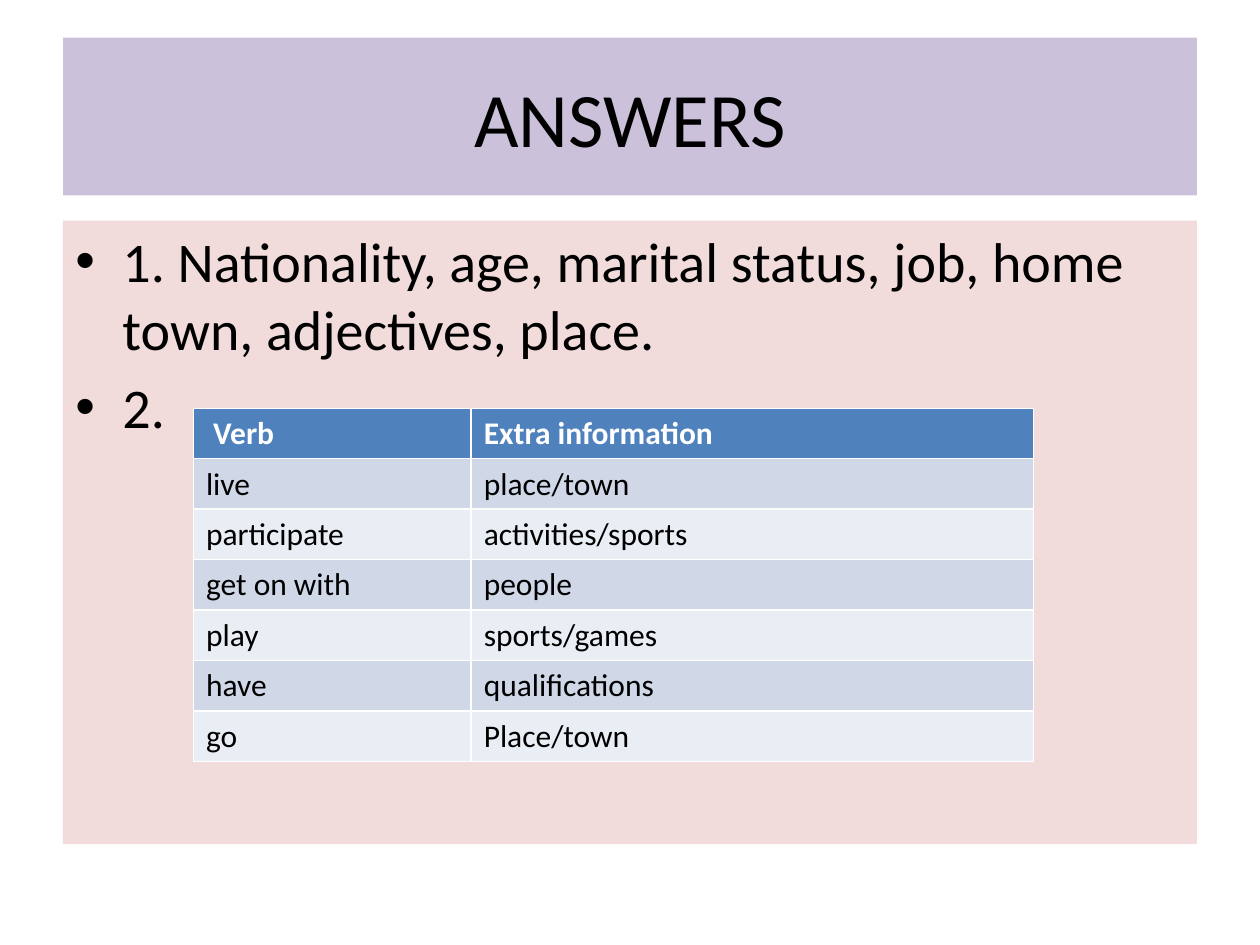
from dataclasses import dataclass

from lxml import etree
from pptx import Presentation
from pptx.dml.color import RGBColor
from pptx.enum.text import MSO_ANCHOR, PP_ALIGN
from pptx.oxml.ns import qn
from pptx.util import Cm, Pt

CENTER, LEFT = PP_ALIGN.CENTER, PP_ALIGN.LEFT
TOP, MIDDLE = MSO_ANCHOR.TOP, MSO_ANCHOR.MIDDLE
TITLE_ONLY = 5


@dataclass(frozen=True)
class Theme:
    """Colours and type sizes of the slide."""
    font: str = "Calibri"
    text: str = "000000"
    light_text: str = "FFFFFF"
    title_fill: str = "CCC1DA"
    body_fill: str = "F2DCDB"
    header_fill: str = "4F81BD"
    bands: tuple = ("D0D8E8", "E9EDF4")
    title_size: int = 44
    body_size: int = 32
    table_size: int = 18


def fill(target, color):
    """Give a shape or cell a solid fill."""
    target.fill.solid()
    target.fill.fore_color.rgb = RGBColor.from_string(color)


def write(p, text, *, font, size, color, bold=False, align=LEFT):
    """Put one formatted run into a paragraph."""
    p.alignment = align
    r = p.add_run()
    r.text = text
    r.font.name, r.font.size, r.font.bold = font, Pt(size), bold
    r.font.color.rgb = RGBColor.from_string(color)


def add_bullet(p, indent):
    """Give a paragraph a round bullet with a hanging indent."""
    pPr = p._p.get_or_add_pPr()
    pPr.set("marL", str(indent))
    pPr.set("indent", str(-indent))
    etree.SubElement(pPr, qn("a:buFont")).set("typeface", "Arial")
    etree.SubElement(pPr, qn("a:buChar")).set("char", "•")


class SlideBuilder:
    """Hold the theme and the current slide."""

    def __init__(self, prs, theme):
        """Add a title-only slide to the presentation."""
        self.theme = theme
        self.s = prs.slides.add_slide(prs.slide_layouts[TITLE_ONLY])

    def title(self, text, left, top, width, height):
        """Place and format the title."""
        t, sp = self.theme, self.s.shapes.title
        sp.left, sp.top, sp.width, sp.height = left, top, width, height
        fill(sp, t.title_fill)
        tf = sp.text_frame
        tf.vertical_anchor = MIDDLE
        write(tf.paragraphs[0], text, font=t.font, size=t.title_size,
              color=t.text, align=CENTER)

    def bullets(self, items, left, top, width, height):
        """Add a filled box of bulleted paragraphs."""
        t = self.theme
        sp = self.s.shapes.add_textbox(left, top, width, height)
        fill(sp, t.body_fill)
        tf = sp.text_frame
        tf.word_wrap = True
        tf.vertical_anchor = TOP
        for i, item in enumerate(items):
            p = tf.add_paragraph() if i else tf.paragraphs[0]
            p.space_before = Pt(t.body_size * 0.2)
            add_bullet(p, Cm(0.95))
            write(p, item, font=t.font, size=t.body_size, color=t.text)

    def table(self, rows, left, top, widths, row_height):
        """Add a table with a header row and banded body rows."""
        t = self.theme
        table = self.s.shapes.add_table(
            len(rows), len(widths), left, top, sum(widths),
            row_height * len(rows)).table
        for column, width in zip(table.columns, widths):
            column.width = width
        for i, row in enumerate(rows):
            header = i == 0
            for j, text in enumerate(row):
                cell = table.cell(i, j)
                fill(cell, t.header_fill if header else t.bands[(i - 1) % 2])
                write(cell.text_frame.paragraphs[0], text, font=t.font,
                      size=t.table_size, bold=header,
                      color=t.light_text if header else t.text)


def main():
    """Build the answers slide."""
    prs = Presentation()
    prs.slide_width, prs.slide_height = Cm(25.4), Cm(19.05)
    left, width = Cm(1.27), Cm(22.86)
    slide = SlideBuilder(prs, Theme())
    slide.title("ANSWERS", left, Cm(0.76), width, Cm(3.18))
    slide.bullets(
        ["1. Nationality, age, marital status, job, home town, "
         "adjectives, place.", "2."],
        left, Cm(4.45), width, Cm(12.57))
    slide.table(
        [(" Verb", "Extra information"),
         ("live", "place/town"),
         ("participate", "activities/sports"),
         ("get on with", "people"),
         ("play", "sports/games"),
         ("have", "qualifications"),
         ("go", "Place/town")],
        Cm(3.9), Cm(8.23), (Cm(5.6), Cm(11.33)), Cm(0.94))
    prs.save("out.pptx")


if __name__ == "__main__":
    main()
